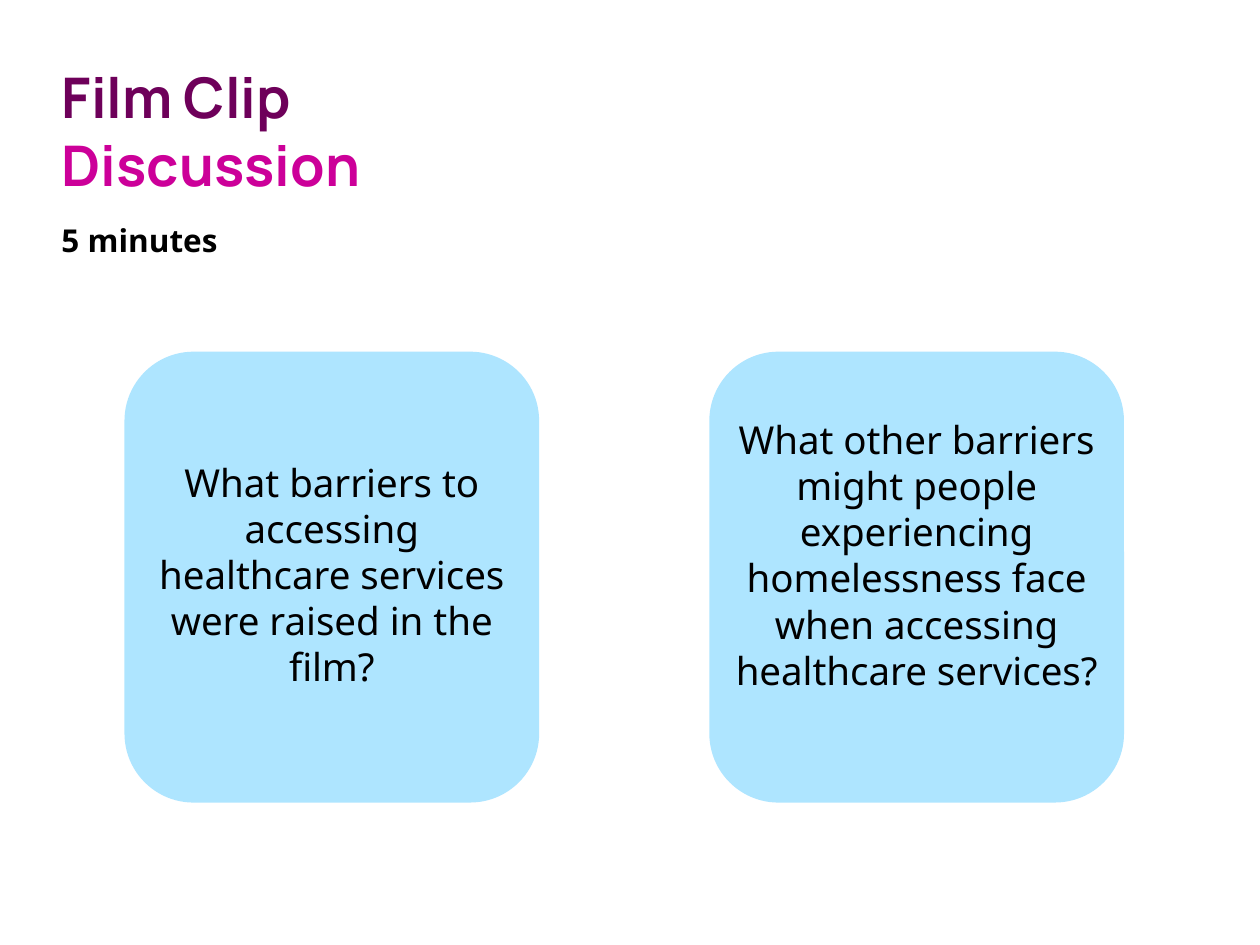
from dataclasses import dataclass

from pptx import Presentation
from pptx.dml.color import RGBColor
from pptx.enum.shapes import MSO_SHAPE as Shape
from pptx.enum.text import MSO_ANCHOR as Anchor, MSO_AUTO_SIZE as AutoSize, PP_ALIGN as Align
from pptx.util import Cm, Pt


@dataclass(frozen=True)
class Theme:
    heading_font: str = "Manrope"
    body_font: str = "Noto Sans"
    plum: RGBColor = RGBColor(0x6E, 0x00, 0x5A)
    magenta: RGBColor = RGBColor(0xCC, 0x00, 0x99)
    sky: RGBColor = RGBColor(0xAE, 0xE5, 0xFF)
    ink: RGBColor = RGBColor(0, 0, 0)
    title_size: Pt = Pt(32)
    timing_size: Pt = Pt(18)
    question_size: Pt = Pt(22)


THEME = Theme()
MARGIN = Cm(0.99)
CARD_TOP, CARD_WIDTH, CARD_HEIGHT = Cm(7.09), Cm(8.36), Cm(9.09)
FIRST_CARD_LEFT, CARD_PITCH = Cm(2.51), Cm(11.79)
QUESTION_INSET, QUESTION_WIDTH = Cm(0.27), Cm(7.82)
QUESTIONS = (
    ("What barriers to accessing healthcare services were raised in the film?", Cm(9.12), Cm(5.59)),
    ("What other barriers might people experiencing homelessness face "
     "when accessing healthcare services?", Cm(8.26), Cm(7.14)),
)


def set_font(font, name, size, bold):
    font.name, font.size, font.bold = name, size, bold


def prepare_frame(frame):
    frame.word_wrap = True
    frame.auto_size = AutoSize.NONE
    frame.vertical_anchor = Anchor.TOP


def add_title(slide, first_line, second_line):
    title = slide.shapes.title
    title.left, title.top, title.width, title.height = MARGIN, Cm(1.14), Cm(19.76), Cm(4.37)
    prepare_frame(title.text_frame)
    heading = title.text_frame.paragraphs[0]
    heading.alignment = Align.LEFT
    set_font(heading.font, THEME.heading_font, THEME.title_size, True)
    opening = heading.add_run()
    opening.text = first_line
    opening.font.color.rgb = THEME.plum
    heading.add_line_break()
    closing = heading.add_run()
    closing.text = second_line
    closing.font.color.rgb = THEME.magenta


def add_timing(slide, wording):
    timing = slide.shapes.add_textbox(MARGIN, Cm(4.34), Cm(24.41), Cm(4.11))
    prepare_frame(timing.text_frame)
    line = timing.text_frame.paragraphs[0]
    line.text = wording
    set_font(line.font, THEME.body_font, THEME.timing_size, True)
    line.font.color.rgb = THEME.ink


def add_panel(slide, outline, left, top, width, height):
    panel = slide.shapes.add_shape(outline, left, top, width, height)
    panel.shadow.inherit = False
    panel.fill.solid()
    panel.fill.fore_color.rgb = THEME.sky
    panel.line.fill.background()
    return panel


def add_question_card(slide, left, wording, top, height):
    add_panel(slide, Shape.ROUNDED_RECTANGLE, left, CARD_TOP, CARD_WIDTH, CARD_HEIGHT)
    question = add_panel(slide, Shape.RECTANGLE, left + QUESTION_INSET, top, QUESTION_WIDTH, height)
    question.line.color.rgb = THEME.sky
    question.line.width = Pt(0.75)
    prepare_frame(question.text_frame)
    prompt = question.text_frame.paragraphs[0]
    prompt.text = wording
    prompt.alignment = Align.CENTER
    set_font(prompt.font, THEME.body_font, THEME.question_size, False)
    prompt.font.color.rgb = THEME.ink


def main():
    deck = Presentation()
    deck.slide_width, deck.slide_height = Cm(25.4), Cm(19.05)
    slide = deck.slides.add_slide(deck.slide_layouts.get_by_name("Title Only"))
    add_title(slide, "Film Clip", "Discussion")
    add_timing(slide, "5 minutes")
    for column, (wording, top, height) in enumerate(QUESTIONS):
        add_question_card(slide, FIRST_CARD_LEFT + column * CARD_PITCH, wording, top, height)
    deck.save("out.pptx")


if __name__ == "__main__":
    main()
